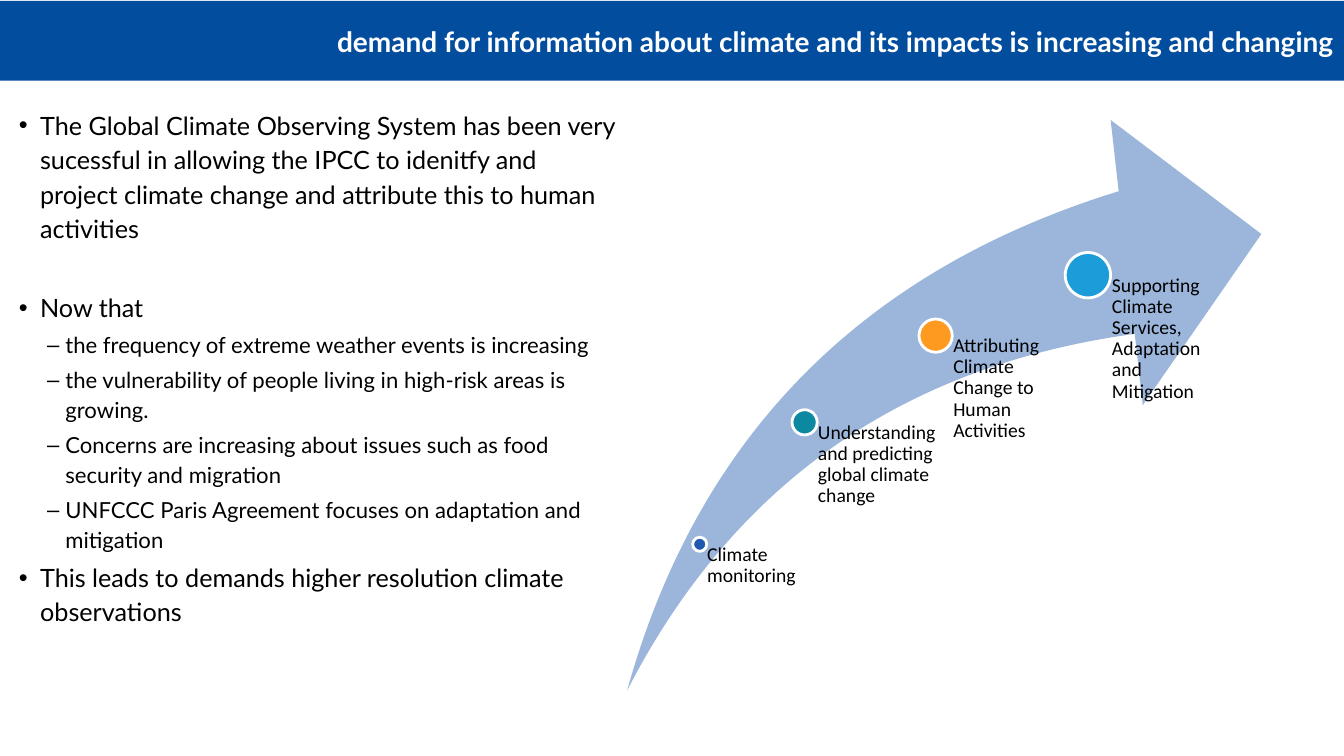
import pptx
import pptx.dml.color
import pptx.enum.shapes
import pptx.enum.text
import pptx.oxml.ns
import pptx.util
from lxml import etree

Inches, Pt = pptx.util.Inches, pptx.util.Pt
SHAPE = pptx.enum.shapes.MSO_SHAPE
ALIGN = pptx.enum.text.PP_ALIGN
ANCHOR = pptx.enum.text.MSO_ANCHOR
qn = pptx.oxml.ns.qn

# Content
TITLE = "demand for information about climate and its impacts is increasing and changing"

# (level, text, space after in points)
BULLETS = [
    (0, "The Global Climate Observing System has been very sucessful in allowing the IPCC "
        "to idenitfy and project climate change and attribute this to human activities", 32),
    (0, "Now that", 3.4),
    (1, "the frequency of extreme weather events is increasing", 3.4),
    (1, "the vulnerability of people living in high-risk areas is growing.", 3.4),
    (1, "Concerns are increasing about issues such as food security and migration", 3.4),
    (1, "UNFCCC Paris Agreement focuses on adaptation and mitigation", 3.4),
    (0, "This leads to demands higher resolution climate observations", 3.4),
]

# (label, dot centre x, dot centre y, dot diameter, label width, label height, colour)
STAGES = [
    ("Climate monitoring", 6.94, 5.4, 0.14, 1.08, 0.94, "1F5AAE"),
    ("Understanding and predicting global climate change",
     7.98, 4.19, 0.25, 1.32, 1.8, "0C89A0"),
    ("Attributing Climate Change to Human Activities",
     9.28, 3.33, 0.33, 1.32, 2.43, "FF9A20"),
    ("Supporting Climate Services, Adaptation and Mitigation",
     10.79, 2.73, 0.45, 1.32, 2.82, "1C9DDA"),
]

THEME = {
    "banner": "034D9E", "arrow": "1F5AAE", "arrow_alpha": 44,
    "light": "FFFFFF", "text": "000000",
    "main_font": "Lato", "label_font": "Calibri",
    "title_size": 20, "level_sizes": (18, 15.8), "label_size": 14,
}
# (bullet, left margin, hanging indent) for each level
LEVELS = [("•", 0.21, 0.21), ("–", 0.46, 0.18)]


def rgb(value):
    return pptx.dml.color.RGBColor.from_string(value)


def add_shape(s, kind, box, fill, line=None):
    sp = s.shapes.add_shape(kind, *map(Inches, box))
    sp.shadow.inherit = False
    sp.fill.solid()
    sp.fill.fore_color.rgb = rgb(fill)
    if line:
        sp.line.color.rgb = rgb(line)
        sp.line.width = Pt(2)
    else:
        sp.line.fill.background()
    return sp


def add_text(s, box):
    tf = s.shapes.add_textbox(*map(Inches, box)).text_frame
    tf.word_wrap = True
    return tf


def write(p, text, font, size, colour, bold=False):
    p.text = text
    for r in p.runs:
        r.font.name, r.font.size, r.font.bold = font, Pt(size), bold
        r.font.color.rgb = rgb(colour)


def set_bullet(p, level):
    char, margin, hang = LEVELS[level]
    props = p._p.get_or_add_pPr()
    props.set("marL", str(Inches(margin)))
    props.set("indent", str(-Inches(hang)))
    etree.SubElement(props, qn("a:buFont")).set("typeface", "Arial")
    etree.SubElement(props, qn("a:buChar")).set("char", char)


def add_title(s):
    sp = add_shape(s, SHAPE.RECTANGLE, (0, 0.01, 13.33, 0.79), THEME["banner"])
    tf = sp.text_frame
    tf.vertical_anchor = ANCHOR.MIDDLE
    p = tf.paragraphs[0]
    write(p, TITLE, THEME["main_font"], THEME["title_size"], THEME["light"], True)
    p.alignment = ALIGN.RIGHT


def add_bullets(s):
    tf = add_text(s, (0.09, 1, 6.13, 5.61))
    for i, (level, text, after) in enumerate(BULLETS):
        p = tf.add_paragraph() if i else tf.paragraphs[0]
        p.level = level
        set_bullet(p, level)
        p.line_spacing = 1.14
        p.space_after = Pt(after)
        write(p, text, THEME["main_font"], THEME["level_sizes"][level], THEME["text"])


def add_arrow(s):
    sp = add_shape(s, SHAPE.SWOOSH_ARROW, (6.22, 1.19, 6.29, 5.66), THEME["arrow"])
    sp.adjustments[0] = sp.adjustments[1] = 0.25
    colour = sp.fill._xPr.find(qn("a:solidFill"))[0]
    etree.SubElement(colour, qn("a:alpha")).set("val", str(THEME["arrow_alpha"] * 1000))


def add_stage(s, label, x, y, size, width, height, colour):
    # The label box starts at the dot's centre; its inset clears the dot
    add_shape(s, SHAPE.OVAL, (x - size / 2, y - size / 2, size, size),
              colour, THEME["light"])
    tf = add_text(s, (x, y, width, height))
    tf.margin_left = Inches(0.53 * size)
    tf.margin_top = tf.margin_right = tf.margin_bottom = 0
    p = tf.paragraphs[0]
    p.line_spacing = 0.9
    write(p, label, THEME["label_font"], THEME["label_size"], THEME["text"])


def main():
    prs = pptx.Presentation()
    prs.slide_width, prs.slide_height = Inches(13.33), Inches(7.5)
    s = prs.slides.add_slide(prs.slide_layouts[6])
    add_title(s)
    add_bullets(s)
    add_arrow(s)
    for stage in STAGES:
        add_stage(s, *stage)
    prs.save("out.pptx")


if __name__ == "__main__":
    main()
